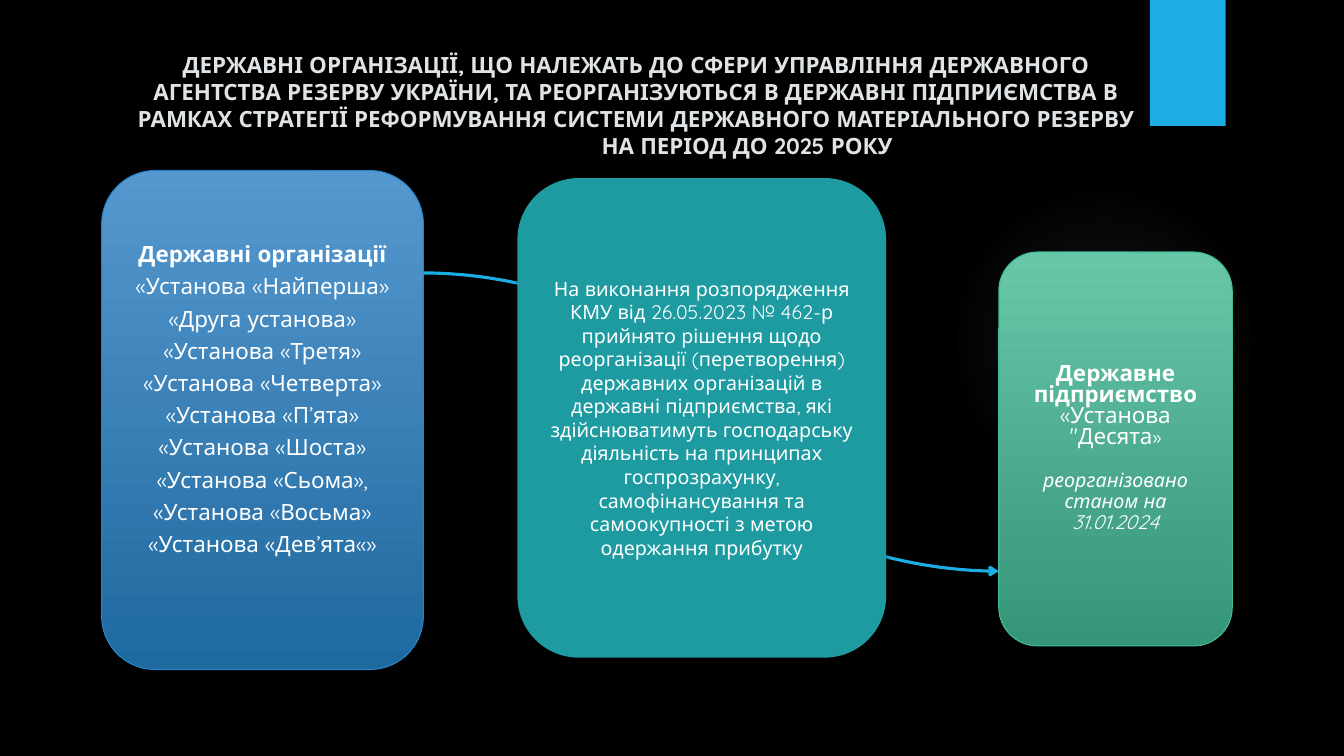
import pptx
import pptx.dml.color
import pptx.enum.shapes
import pptx.enum.text
import pptx.oxml
import pptx.oxml.ns
import pptx.util
from pptx.oxml.ns import qn

SLIDE_WIDTH = pptx.util.Inches(13.33)
SLIDE_HEIGHT = pptx.util.Inches(7.5)
COLUMN = SLIDE_WIDTH / 16
ROW = SLIDE_HEIGHT / 9
FONT = "Quicksand"
COLORS = {
    "background": "000000", "title": "DFE3E5", "text": "FFFFFF",
    "accent": "1CADE4", "decision": "1D9BA1", "glow": "A0C1D5",
    "list_top": "5598CF", "list_bottom": "1E699F", "list_edge": "2683C6",
    "result_top": "68C6A9", "result_bottom": "359579", "result_edge": "42BA97",
}
TITLE = (
    "ДЕРЖАВНІ ОРГАНІЗАЦІЇ, ЩО НАЛЕЖАТЬ ДО СФЕРИ УПРАВЛІННЯ ДЕРЖАВНОГО "
    "АГЕНТСТВА РЕЗЕРВУ УКРАЇНИ, ТА РЕОРГАНІЗУЮТЬСЯ В ДЕРЖАВНІ ПІДПРИЄМСТВА В "
    "РАМКАХ СТРАТЕГІЇ РЕФОРМУВАННЯ СИСТЕМИ ДЕРЖАВНОГО МАТЕРІАЛЬНОГО РЕЗЕРВУ"
)
PERIOD = "НА ПЕРІОД ДО 2025 РОКУ"
ORGANIZATIONS = [
    "«Установа «Найперша»", "«Друга установа»", "«Установа «Третя»",
    "«Установа «Четверта»", "«Установа «П’ята»", "«Установа «Шоста»",
    "«Установа «Сьома»,", "«Установа «Восьма»", "«Установа «Дев’ята«»",
]
DECISION = (
    "На виконання розпорядження КМУ від 26.05.2023 № 462-р прийнято рішення щодо "
    "реорганізації (перетворення) державних організацій в державні підприємства, які "
    "здійснюватимуть господарську діяльність на принципах госпрозрахунку, "
    "самофінансування та самоокупності з метою одержання прибутку"
)


def rgb(name):
    return pptx.dml.color.RGBColor.from_string(COLORS[name])


def on_grid(left, top, width, height):
    return (round(left * COLUMN), round(top * ROW),
            round(width * COLUMN), round(height * ROW))


def add_block(slide, kind, place, fill, edge=None):
    """Add a preset shape; two fill names make a gradient from top to bottom."""
    block = slide.shapes.add_shape(kind, *on_grid(*place))
    block.shadow.inherit = False
    if len(fill) == 2:
        block.fill.gradient()
        block.fill.gradient_angle = 270
        for stop, position, name in zip(block.fill.gradient_stops, (0, 1), fill):
            stop.position = position
            stop.color.rgb = rgb(name)
    else:
        block.fill.solid()
        block.fill.fore_color.rgb = rgb(fill[0])
    if edge:
        block.line.color.rgb = rgb(edge)
        block.line.width = pptx.util.Pt(0.75)
    else:
        block.line.fill.background()
    return block


def add_shadow(block, opacity, blur, distance):
    effects = block._element.spPr.find(qn("a:effectLst"))
    effects.append(pptx.oxml.parse_xml(
        f'<a:outerShdw {pptx.oxml.ns.nsdecls("a")} blurRad="{pptx.util.Pt(blur)}" '
        f'dist="{pptx.util.Pt(distance)}" dir="5400000" rotWithShape="0">'
        f'<a:srgbClr val="000000"><a:alpha val="{opacity * 1000}"/></a:srgbClr>'
        "</a:outerShdw>"))


def add_glow(slide):
    glow = add_block(slide, pptx.enum.shapes.MSO_SHAPE.OVAL,
                     (11.29, 2.2, 3.7, 3.7), ["glow"])
    stops = "".join(
        f'<a:gs pos="{position * 1000}"><a:srgbClr val="{COLORS["glow"]}">'
        f'<a:alpha val="{opacity * 1000}"/></a:srgbClr></a:gs>'
        for position, opacity in ((0, 7), (36, 6), (69, 0)))
    gradient = pptx.oxml.parse_xml(
        f'<a:gradFill {pptx.oxml.ns.nsdecls("a")}><a:gsLst>{stops}</a:gsLst>'
        '<a:path path="circle"><a:fillToRect l="50000" t="50000" r="50000" b="50000"/>'
        "</a:path></a:gradFill>")
    properties = glow._element.spPr
    properties.replace(properties.find(qn("a:solidFill")), gradient)


def write(frame, paragraphs, spacing=1.0, color="text",
          anchor=pptx.enum.text.MSO_ANCHOR.MIDDLE):
    """Fill a frame; each paragraph is a list of (text, size, bold, italic) runs."""
    frame.word_wrap = True
    frame.auto_size = pptx.enum.text.MSO_AUTO_SIZE.NONE
    frame.vertical_anchor = anchor
    for index, runs in enumerate(paragraphs):
        paragraph = frame.add_paragraph() if index else frame.paragraphs[0]
        paragraph.alignment = pptx.enum.text.PP_ALIGN.CENTER
        paragraph.line_spacing = spacing
        paragraph.space_before = pptx.util.Pt(0)
        for text, size, bold, italic in runs:
            run = paragraph.add_run()
            run.text = text
            run.font.name = FONT
            run.font.size = pptx.util.Pt(size)
            run.font.bold = bold
            run.font.italic = italic
            run.font.color.rgb = rgb(color)


def add_title(slide):
    title = slide.shapes.title
    title.left, title.top, title.width, title.height = on_grid(1.43, 0.55, 12.29, 1.31)
    write(title.text_frame, [[(line, 16, True, False)] for line in (TITLE, PERIOD)],
          color="title", anchor=pptx.enum.text.MSO_ANCHOR.TOP)
    period = title.text_frame.paragraphs[1]
    period._p.get_or_add_pPr().set("marL", str(round(2.64 * COLUMN)))


def add_curved_arrow(slide, left, top, right, bottom):
    begin_x, begin_y, end_x, end_y = on_grid(left, top, right, bottom)
    arrow = slide.shapes.add_connector(
        pptx.enum.shapes.MSO_CONNECTOR.CURVE, begin_x, begin_y, end_x, end_y)
    arrow.line.color.rgb = rgb("accent")
    arrow.line.width = pptx.util.Pt(2.25)
    line = arrow.line._get_or_add_ln()
    line.append(line.makeelement(qn("a:tailEnd"), {"type": "arrow"}))
    properties = arrow._element.spPr
    properties.append(properties.makeelement(qn("a:effectLst"), {}))


def main():
    presentation = pptx.Presentation()
    presentation.slide_width = SLIDE_WIDTH
    presentation.slide_height = SLIDE_HEIGHT
    slide = presentation.slides.add_slide(presentation.slide_layouts[5])
    slide.background.fill.solid()
    slide.background.fill.fore_color.rgb = rgb("background")
    rounded = pptx.enum.shapes.MSO_SHAPE.ROUNDED_RECTANGLE

    add_glow(slide)
    ribbon = add_block(slide, pptx.enum.shapes.MSO_SHAPE.RECTANGLE,
                       (13.69, 0, 0.9, 1.5), ["accent"])
    add_shadow(ribbon, 45, 3, 2)
    add_title(slide)

    organizations = add_block(slide, rounded, (1.21, 2.03, 3.83, 5.94),
                              ["list_top", "list_bottom"], "list_edge")
    write(organizations.text_frame,
          [[("Державні організації", 16, True, False)]]
          + [[(name, 16, False, False)] for name in ORGANIZATIONS], spacing=1.2)
    organizations.text_frame.margin_bottom = round(0.63 * ROW)

    add_curved_arrow(slide, 5.04, 3.25, 11.89, 6.8)

    decision = add_block(slide, rounded, (6.16, 2.12, 4.39, 5.71), ["decision"])
    add_shadow(decision, 32, 3.5, 2.2)
    write(decision.text_frame, [[(DECISION, 14, False, False)]])

    enterprise = add_block(slide, rounded, (11.89, 3, 2.78, 4.69),
                           ["result_top", "result_bottom"], "result_edge")
    write(enterprise.text_frame, [
        [("Державне підприємство ", 16, True, False),
         ("«Установа \"Десята", 16, False, False), ("»", 14, False, False)],
        [("реорганізовано", 14, False, True)],
        [("станом на 31.01.2024", 14, False, True)],
    ], spacing=pptx.util.Pt(15))
    enterprise.text_frame.paragraphs[1].space_before = pptx.util.Pt(15)

    presentation.save("out.pptx")


if __name__ == "__main__":
    main()
